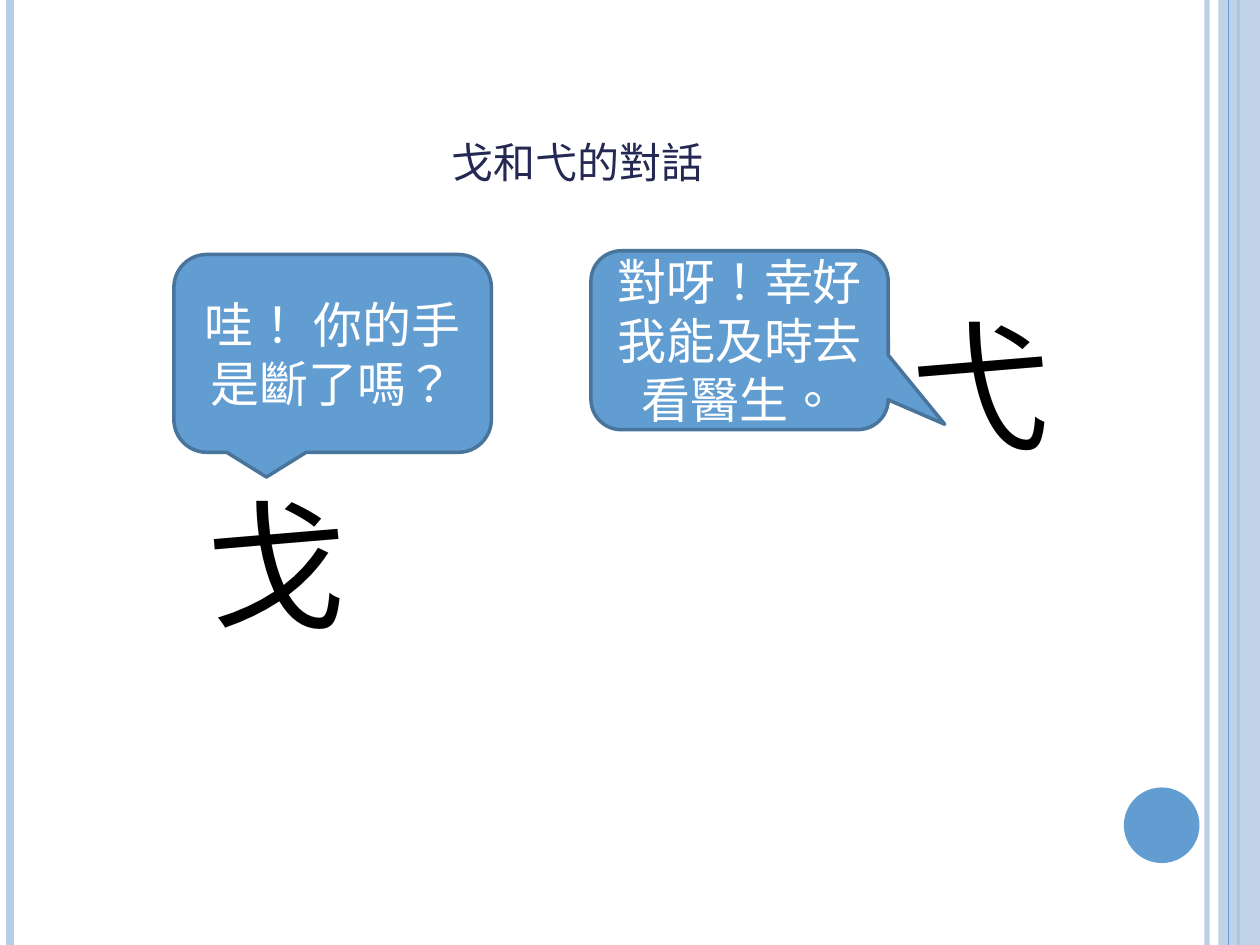
import pptx
import pptx.util
import pptx.dml.color
import pptx.enum.shapes
import pptx.enum.text
import pptx.oxml
import pptx.oxml.ns

Inches, Pt = pptx.util.Inches, pptx.util.Pt
RGBColor = pptx.dml.color.RGBColor
KIND = pptx.enum.shapes.MSO_SHAPE
ANCHOR = pptx.enum.text.MSO_ANCHOR
ALIGN = pptx.enum.text.PP_ALIGN

PALE = RGBColor(0xB7, 0xCC, 0xE5)
BLUE = RGBColor(0x62, 0x9D, 0xD1)
EDGE = RGBColor(0x49, 0x74, 0x9B)
NAVY = RGBColor(0x24, 0x28, 0x52)
BLACK = RGBColor(0, 0, 0)
WHITE = RGBColor(0xFF, 0xFF, 0xFF)
FACE = "TeX Gyre Schola"


class Deck:
    def __init__(self, wide, high):
        self.deck = pptx.Presentation()
        self.deck.slide_width, self.deck.slide_height = Inches(wide), Inches(high)
        self.high = high
        self.slide = self.deck.slides.add_slide(self.deck.slide_layouts[6])
        self.shapes = self.slide.shapes

    def fade(self, item, alpha):
        """Make the first solid colour partly clear; alpha is in percent."""
        tone = next(item._element.spPr.iter(pptx.oxml.ns.qn("a:srgbClr")))
        node = pptx.oxml.parse_xml(
            "<a:alpha %s val='%d'/>" % (pptx.oxml.ns.nsdecls("a"), alpha * 1000))
        tone.append(node)

    def rule(self, x, color, width, alpha=100):
        """Draw a line down the full height of the slide."""
        line = self.shapes.add_connector(
            pptx.enum.shapes.MSO_CONNECTOR.STRAIGHT,
            Inches(x), Inches(0), Inches(x), Inches(self.high))
        line.line.color.rgb = color
        line.line.width = Pt(width)
        if alpha < 100:
            self.fade(line, alpha)
        line._element.spPr.append(pptx.oxml.parse_xml(
            "<a:effectLst %s/>" % pptx.oxml.ns.nsdecls("a")))

    def shape(self, kind, box, color, alpha=100, edge=None):
        item = self.shapes.add_shape(kind, *map(Inches, box))
        item.shadow.inherit = False
        item.fill.solid()
        item.fill.fore_color.rgb = color
        if alpha < 100:
            self.fade(item, alpha)
        if edge is None:
            item.line.fill.background()
        else:
            item.line.color.rgb = edge
            item.line.width = Pt(2)
        return item

    def label(self, item, words, size, color, align, anchor, wrap=True, caps=False):
        frame = item.text_frame
        for name, value in {"word_wrap": wrap, "vertical_anchor": anchor}.items():
            setattr(frame, name, value)
        para = frame.paragraphs[0]
        para.alignment = align
        run = para.add_run()
        run.text = words
        for name, value in {"size": Pt(size), "name": FACE}.items():
            setattr(run.font, name, value)
        run.font.color.rgb = color
        props = run._r.get_or_add_rPr()
        props.set("lang", "zh-TW")
        if caps:
            props.set("cap", "small")

    def text(self, box, *args, **style):
        item = self.shapes.add_textbox(*map(Inches, box))
        self.label(item, *args, **style)
        return item

    def glyph(self, x, y, word):
        item = self.text((x, y, 1.32, 1.45), word, 80, BLACK,
                         ALIGN.LEFT, ANCHOR.TOP, wrap=False)
        item.text_frame.auto_size = pptx.enum.text.MSO_AUTO_SIZE.SHAPE_TO_FIT_TEXT

    def bubble(self, box, words, tail=()):
        item = self.shape(KIND.ROUNDED_RECTANGULAR_CALLOUT, box, BLUE, edge=EDGE)
        for i, value in enumerate(tail):
            item.adjustments[i] = value
        self.label(item, words, 28, WHITE, ALIGN.CENTER, ANCHOR.MIDDLE)


def main():
    page = Deck(10, 7.5)

    # Side stripes and dot
    page.rule(9.58, PALE, 3, 93)
    page.rule(0.08, PALE, 4.5)
    page.rule(9.83, BLUE, 1.5)
    page.shape(KIND.RECTANGLE, (9.67, 0, 0.33, 7.5), PALE, 87)
    page.rule(9.75, BLUE, 0.75)
    page.shape(KIND.OVAL, (8.92, 6.25, 0.6, 0.6), BLUE)

    # Title
    page.text((0.5, 0.3, 8.17, 1.25), "戈和弋的對話", 30, NAVY,
              ALIGN.CENTER, ANCHOR.BOTTOM, caps=True)

    # The two speakers
    page.glyph(1.54, 3.75, "戈")
    page.glyph(7.13, 2.33, "弋")

    # What they say
    page.bubble((1.38, 2.02, 2.52, 1.57), "哇！ 你的手是斷了嗎？")
    page.bubble((4.69, 1.99, 2.36, 1.42), "對呀！幸好我能及時去看醫生。",
                (0.69, 0.47, 0.17))

    page.deck.save("out.pptx")


if __name__ == "__main__":
    main()
